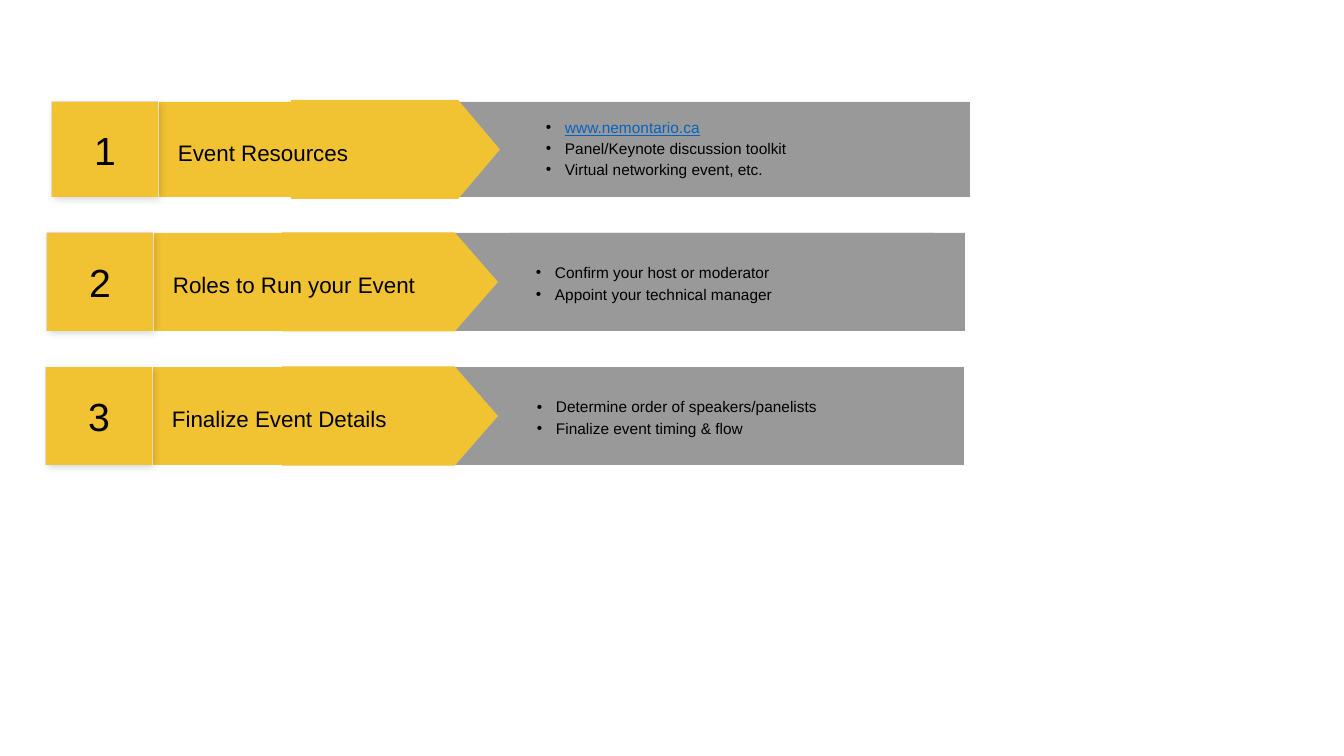
from pptx import Presentation
from pptx.dml.color import RGBColor
from pptx.enum.shapes import MSO_SHAPE
from pptx.enum.text import MSO_ANCHOR, MSO_AUTO_SIZE, PP_ALIGN
from pptx.oxml import parse_xml
from pptx.oxml.ns import nsdecls, qn
from pptx.util import Pt

STEPS = [
    {"number": "1", "label": "Event Resources",
     "details": ["www.nemontario.ca", "Panel/Keynote discussion toolkit",
                 "Virtual networking event, etc."],
     "left": 52, "top": 102, "height": 95,
     "arrow": (291, 209), "panel": (520, 103, 412, 88)},
    {"number": "2", "label": "Roles to Run your Event",
     "details": ["Confirm your host or moderator", "Appoint your technical manager"],
     "left": 47, "top": 233, "height": 98,
     "arrow": (282, 216), "panel": (510, 233, 424, 98)},
    {"number": "3", "label": "Finalize Event Details",
     "details": ["Determine order of speakers/panelists", "Finalize event timing & flow"],
     "left": 46, "top": 367, "height": 98,
     "arrow": (282, 216), "panel": (511, 367, 423, 98)},
]
WEB_ADDRESS = "www.nemontario.ca"

YELLOW = RGBColor(0xF1, 0xC2, 0x32)
GRAY = RGBColor(0x99, 0x99, 0x99)
PURPLE = RGBColor(0x76, 0x1E, 0x86)
BLACK = RGBColor(0, 0, 0)
LINK_BLUE = RGBColor(0x05, 0x63, 0xC1)

PX = 914400 / 100.8
INSET, BULLET_INDENT, BULLET_HANG = 10, 35, 19
ARROW_HEIGHT = 99
COMPARISON_LAYOUT = 4

NUMBER = {"size": Pt(28), "align": PP_ALIGN.CENTER, "spacing": 1.0}
LABEL = {"size": Pt(16), "align": PP_ALIGN.LEFT, "spacing": 1.15}
DETAIL = {"size": Pt(11), "align": PP_ALIGN.LEFT, "spacing": 1.15}

SHADOW_XML = (
    f'<a:outerShdw {nsdecls("a")} blurRad="{Pt(5.6)}" dist="{Pt(2.2)}" dir="2700000" '
    'algn="tl" rotWithShape="0"><a:srgbClr val="000000"><a:alpha val="17000"/>'
    '</a:srgbClr></a:outerShdw>')
BULLET_XML = (
    '<a:buClr {0}><a:srgbClr val="000000"/></a:buClr>',
    '<a:buFont {0} typeface="Arial"/>',
    '<a:buChar {0} char="•"/>')


def px(length):
    return round(length * PX)


def assign(target, values):
    for name, value in values.items():
        setattr(target, name, value)


def place(part, left, top, width, height):
    assign(part, {"left": px(left), "top": px(top),
                  "width": px(width), "height": px(height)})


def add_block(slide, color, box, kind=MSO_SHAPE.RECTANGLE):
    block = slide.shapes.add_shape(kind, *map(px, box))
    block.shadow.inherit = False
    block.fill.solid()
    block.fill.fore_color.rgb = color
    block.line.fill.background()
    return block


def write(part, lines, style, bulleted=False):
    frame = part.text_frame
    assign(frame, {"word_wrap": True, "auto_size": MSO_AUTO_SIZE.NONE,
                   "vertical_anchor": MSO_ANCHOR.MIDDLE,
                   "margin_left": px(INSET), "margin_right": px(INSET),
                   "margin_top": px(INSET), "margin_bottom": px(INSET)})
    for position, line in enumerate(lines):
        paragraph = frame.add_paragraph() if position else frame.paragraphs[0]
        assign(paragraph, {"alignment": style["align"], "line_spacing": style["spacing"],
                           "space_before": Pt(0), "space_after": Pt(0)})
        if bulleted:
            properties = paragraph._p.get_or_add_pPr()
            properties.set("marL", str(px(BULLET_INDENT)))
            properties.set("indent", str(-px(BULLET_HANG)))
            for xml in BULLET_XML:
                properties.append(parse_xml(xml.format(nsdecls("a"))))
        run = paragraph.add_run()
        run.text = line
        is_address = line == WEB_ADDRESS
        assign(run.font, {"name": "Arial", "size": style["size"],
                          "bold": False, "underline": is_address})
        run.font.color.rgb = LINK_BLUE if is_address else BLACK


def add_step(slide, step, details):
    left, top, height = step["left"], step["top"], step["height"]
    add_block(slide, GRAY, (left + 329, top, 589, height))
    add_block(slide, YELLOW, (left + 107, top, 284, height))

    arrow_left, arrow_length = step["arrow"]
    turn_offset = (arrow_length - ARROW_HEIGHT) / 2
    arrow_top = top + (height - ARROW_HEIGHT) / 2
    arrow = add_block(slide, YELLOW,
                      (arrow_left + turn_offset, arrow_top - turn_offset,
                       ARROW_HEIGHT, arrow_length),
                      MSO_SHAPE.FLOWCHART_OFFPAGE_CONNECTOR)
    arrow.rotation = 270

    label = slide.shapes.add_textbox(
        *map(px, (left + 116, top + 12, 299, height - 22)))
    write(label, [step["label"]], LABEL)

    number_box = (left, top, 106, height)
    backing = add_block(slide, PURPLE, number_box)
    backing.element.spPr.find(qn("a:effectLst")).append(parse_xml(SHADOW_XML))
    write(add_block(slide, YELLOW, number_box), [step["number"]], NUMBER)

    slide.shapes.element.append(details.element)
    place(details, *step["panel"])
    details.fill.solid()
    details.fill.fore_color.rgb = GRAY
    write(details, step["details"], DETAIL, bulleted=True)


def main():
    """Build the slide of three event planning steps."""
    deck = Presentation()
    assign(deck, {"slide_width": px(1344), "slide_height": px(756)})
    slide = deck.slides.add_slide(deck.slide_layouts[COMPARISON_LAYOUT])
    title, *bodies = list(slide.placeholders)
    for spare in (title, *bodies[len(STEPS):]):
        spare.element.getparent().remove(spare.element)
    for step, details in zip(STEPS, bodies):
        add_step(slide, step, details)
    deck.save("out.pptx")


if __name__ == "__main__":
    main()
